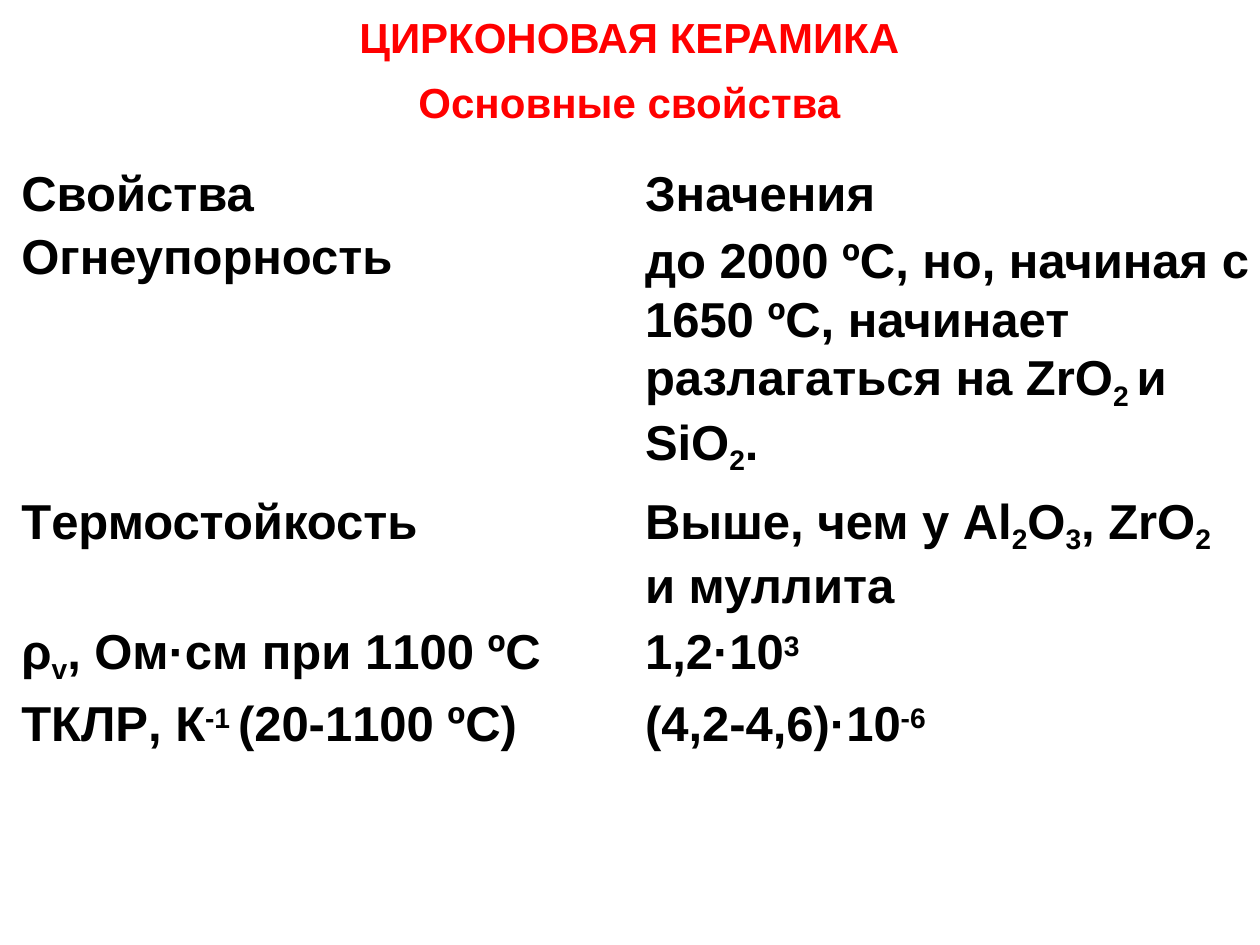
from pptx import Presentation
from pptx.dml.color import RGBColor
from pptx.enum.text import MSO_ANCHOR, MSO_AUTO_SIZE, PP_ALIGN
from pptx.util import Inches, Pt

COLORS = {"title": "FF0000", "text": "000000"}
SUB, SUP = -21, 26


def low(text, gap=0):
    return text, SUB, gap


def high(text):
    return text, SUP, 0


def tight(text, gap):
    """Normal text with its letter spacing changed by gap points."""
    return text, 0, gap


ROWS = [
    ([["Свойства"]], [["Значения"]]),
    ([["Огнеупорность"]],
     [["до 2000 ºС, но, начиная с 1650 ºС, начинает разлагаться на ZrO",
       low("2 "), "и SiO", low("2"), "."]]),
    ([[tight("Т", -1.5), "ермостойкость"]],
     [["Выше, чем у Al", low("2"), "O", low("3"), ", ZrO", low("2")],
      ["и муллита"]]),
    ([["ρ", low("v", -2.7), ", Ом·см при ", tight("1", -1.6), "100 ºС"]],
     [["1,2·10", high("3")]]),
    ([["ТКЛ", tight("Р", -3.9), ", К", high("-1 "), "(20-",
       tight("1", -1.6), "100 ºС)"]],
     [["(4,2-4,6)·10", high("-6")]]),
]
COLS = [4.64, 5.37]
HEIGHTS = [0.5, 2.1, 1.03, 0.57, 0.47]
INDENTS = [0.16, 0.47]


class Deck:
    font = "Arial"

    def __init__(self):
        self.prs = Presentation()
        self.prs.slide_width, self.prs.slide_height = Inches(10), Inches(7.5)
        self.slide = self.prs.slides.add_slide(self.prs.slide_layouts[6])

    def fill_in(self, para, parts, size, color):
        """Add runs given as plain strings or (text, baseline, gap)."""
        for part in parts:
            text, base, gap = (part, 0, 0) if isinstance(part, str) else part
            run = para.add_run()
            run.text = text
            font = run.font
            font.name, font.bold = self.font, True
            font.size = Pt(27.8 if base else size)
            font.color.rgb = RGBColor.from_string(COLORS[color])
            props = run._r.get_or_add_rPr()
            if base:
                props.set("baseline", str(base * 1000))
            if gap:
                props.set("spc", str(round(gap * 100)))

    def title(self, lines, left, top, width, height):
        box = self.slide.shapes.add_textbox(
            Inches(left), Inches(top), Inches(width), Inches(height))
        frame = box.text_frame
        frame.word_wrap = True
        frame.auto_size = MSO_AUTO_SIZE.SHAPE_TO_FIT_TEXT
        frame.margin_left = frame.margin_right = 0
        frame.margin_top = frame.margin_bottom = 0
        for i, line in enumerate(lines):
            para = frame.add_paragraph() if i else frame.paragraphs[0]
            para.alignment = PP_ALIGN.CENTER
            if i:
                para.space_before = Pt(8.7)
            self.fill_in(para, [line], 24, "title")

    def cell(self, cell, lines, indent, spacing):
        cell.fill.background()
        cell.vertical_anchor = MSO_ANCHOR.TOP
        cell.margin_left = cell.margin_right = 0
        cell.margin_top = cell.margin_bottom = 0
        frame = cell.text_frame
        for i, parts in enumerate(lines):
            para = frame.add_paragraph() if i else frame.paragraphs[0]
            props = para._p.get_or_add_pPr()
            props.set("marL", str(Inches(indent)))
            props.set("indent", "0")
            if spacing:
                para.line_spacing = spacing
            if i:
                para.space_before = Pt(2.2)
            self.fill_in(para, parts, 28, "text")

    def table(self, rows, left, top):
        grid = self.slide.shapes.add_table(
            len(rows), len(COLS), Inches(left), Inches(top),
            Inches(sum(COLS)), Inches(sum(HEIGHTS))).table
        grid.first_row = grid.horz_banding = False
        for col, width in zip(grid.columns, COLS):
            col.width = Inches(width)
        for r, row in enumerate(rows):
            grid.rows[r].height = Inches(HEIGHTS[r])
            for c, lines in enumerate(row):
                spacing = 1.07 if (r, c) == (1, 1) else None
                self.cell(grid.cell(r, c), lines, INDENTS[c], spacing)


def main():
    deck = Deck()
    deck.title(["ЦИРКОНОВАЯ КЕРАМИКА", "Основные свойства"],
               2.84, 0.09, 4.31, 0.93)
    deck.table(ROWS, 0.01, 1.33)
    deck.prs.save("out.pptx")


if __name__ == "__main__":
    main()
